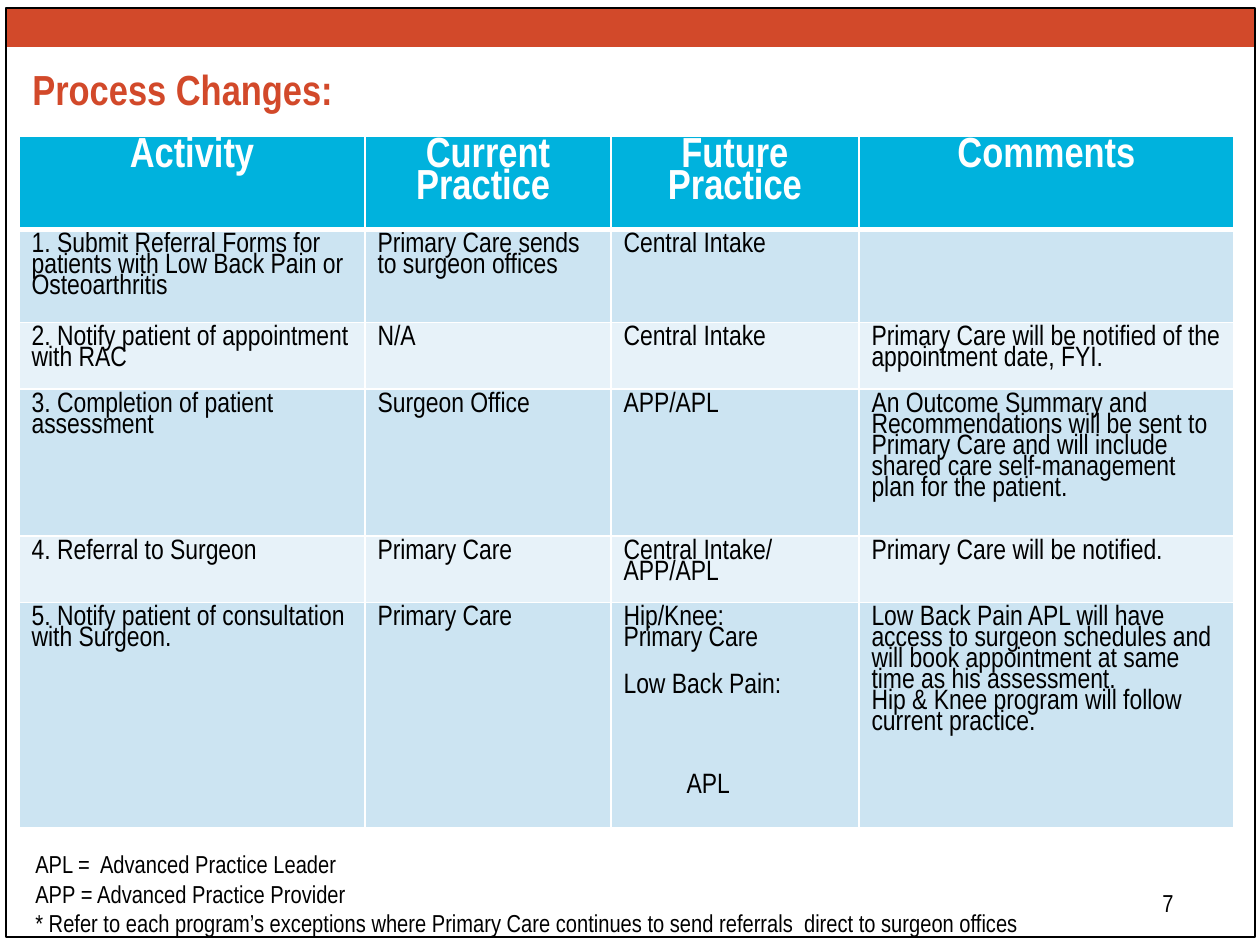
"""Build the slide that compares current and future referral practice."""
from dataclasses import dataclass

from lxml.etree import SubElement
from pptx import Presentation
from pptx.dml.color import RGBColor
from pptx.enum.shapes import MSO_SHAPE
from pptx.enum.text import PP_ALIGN
from pptx.oxml.ns import qn
from pptx.util import Emu, Pt

PX_PER_INCH = 126
FONT = "Arial Narrow"
ORANGE = RGBColor(0xD2, 0x49, 0x2A)
CYAN = RGBColor(0x00, 0xB2, 0xDD)
BAND_DARK = RGBColor(0xCC, 0xE4, 0xF2)
BAND_LIGHT = RGBColor(0xE7, 0xF2, 0xF9)
WHITE = RGBColor(0xFF, 0xFF, 0xFF)
BLACK = RGBColor(0x00, 0x00, 0x00)


@dataclass
class Box:
    left: int
    top: int
    width: int
    height: int


@dataclass
class Line:
    text: str
    before: int = 0
    indent: int = 0


@dataclass
class Row:
    height: int
    cells: list


COLUMN_WIDTHS = [346, 246, 248, 375]
ROWS = [
    Row(90, ["Activity", "Current Practice ", "Future Practice", "Comments"]),
    Row(92, ["1. Submit Referral Forms for patients with Low Back Pain or Osteoarthritis",
             "Primary Care sends to surgeon offices", "Central Intake", ""]),
    Row(66, ["2. Notify patient of appointment with RAC", "N/A", "Central Intake",
             "Primary Care will be notified of the appointment date, FYI."]),
    Row(144, ["3. Completion of patient assessment", "Surgeon Office", "APP/APL",
              "An Outcome Summary and Recommendations will be sent to Primary Care "
              "and will include shared care self-management plan for the patient."]),
    Row(65, ["4. Referral to Surgeon", "Primary Care", "Central Intake/\nAPP/APL",
             "Primary Care will be notified."]),
    Row(222, ["5. Notify patient of consultation with Surgeon.", "Primary Care",
              [Line("Hip/Knee:"), Line("Primary Care"), Line("Low Back Pain:", before=15),
               Line("APL", before=45, indent=63)],
              "Low Back Pain APL will have access to surgeon schedules and will book "
              "appointment at same time as his assessment.\n"
              "Hip & Knee program will follow current practice."]),
]
FOOTNOTES = (
    "APL =  Advanced Practice Leader\n"
    "APP = Advanced Practice Provider\n"
    "* Refer to each program’s exceptions where Primary Care continues to send "
    "referrals  direct to surgeon offices"
)


def px(length: int) -> Emu:
    """Turn pixels into EMU."""
    return Emu(round(length * 914400 / PX_PER_INCH))


def place(box: Box) -> tuple:
    """Return the four lengths of a box in EMU."""
    return px(box.left), px(box.top), px(box.width), px(box.height)


def write(frame, text, *, size: int, color: RGBColor = BLACK, bold: bool = False,
          align=PP_ALIGN.LEFT, spacing: float = 1.0) -> None:
    """Fill a text frame with a string or a list of lines."""
    frame.word_wrap = True
    lines = [Line(part) for part in text.split("\n")] if isinstance(text, str) else text
    for index, line in enumerate(lines):
        paragraph = frame.add_paragraph() if index else frame.paragraphs[0]
        paragraph.alignment = align
        paragraph.line_spacing = spacing
        paragraph.space_before = Pt(line.before)
        if line.indent:
            paragraph._p.get_or_add_pPr().set("marL", str(px(line.indent)))
        paragraph.font.size = Pt(size)
        if line.text:
            run = paragraph.add_run()
            run.text = line.text
            run.font.name = FONT
            run.font.size = Pt(size)
            run.font.bold = bold
            run.font.color.rgb = color


def add_text(slide, box: Box, text, **style) -> None:
    """Add a text box."""
    write(slide.shapes.add_textbox(*place(box)).text_frame, text, **style)


def add_rectangle(slide, box: Box, fill=None, line=None) -> None:
    """Add a rectangle with an optional fill and outline."""
    shape = slide.shapes.add_shape(MSO_SHAPE.RECTANGLE, *place(box))
    shape.shadow.inherit = False
    if fill is None:
        shape.fill.background()
    else:
        shape.fill.solid()
        shape.fill.fore_color.rgb = fill
    if line is None:
        shape.line.fill.background()
    else:
        shape.line.color.rgb = line
        shape.line.width = Pt(0.75)


def set_borders(cell, top: int, bottom: int) -> None:
    """Give a cell white borders, one point wide at the sides."""
    properties = cell._tc.get_or_add_tcPr()
    for tag, width in (("a:lnL", 1), ("a:lnR", 1), ("a:lnT", top), ("a:lnB", bottom)):
        border = SubElement(properties, qn(tag), w=str(Pt(width)))
        fill = SubElement(border, qn("a:solidFill"))
        SubElement(fill, qn("a:srgbClr"), val=str(WHITE))


def add_practice_table(slide, left: int, top: int) -> None:
    """Add the table of activities and practices."""
    box = Box(left, top, sum(COLUMN_WIDTHS), sum(row.height for row in ROWS))
    table = slide.shapes.add_table(len(ROWS), len(COLUMN_WIDTHS), *place(box)).table
    for column, width in zip(table.columns, COLUMN_WIDTHS):
        column.width = px(width)
    for row_index, row in enumerate(ROWS):
        table.rows[row_index].height = px(row.height)
        header = row_index == 0
        band = BAND_DARK if row_index % 2 else BAND_LIGHT
        for column_index, text in enumerate(row.cells):
            cell = table.cell(row_index, column_index)
            set_borders(cell, top=3 if row_index == 1 else 1, bottom=3 if header else 1)
            cell.fill.solid()
            cell.fill.fore_color.rgb = CYAN if header else band
            write(cell.text_frame, text, size=24 if header else 16,
                  color=WHITE if header else BLACK, bold=header, spacing=0.8,
                  align=PP_ALIGN.CENTER if header else PP_ALIGN.LEFT)


def main() -> None:
    """Build and save the slide."""
    presentation = Presentation()
    presentation.slide_width = px(1260)
    presentation.slide_height = px(945)
    slide = presentation.slides.add_slide(presentation.slide_layouts[6])
    add_rectangle(slide, Box(6, 8, 1249, 39), fill=ORANGE)
    add_rectangle(slide, Box(6, 8, 1249, 929), line=BLACK)
    add_text(slide, Box(924, 882, 262, 63), "7", size=14, align=PP_ALIGN.RIGHT)
    add_text(slide, Box(20, 57, 1135, 70), "Process Changes:", size=24, color=ORANGE, bold=True)
    add_practice_table(slide, 19, 136)
    add_text(slide, Box(23, 843, 1209, 102), FOOTNOTES, size=14)
    presentation.save("out.pptx")


if __name__ == "__main__":
    main()
